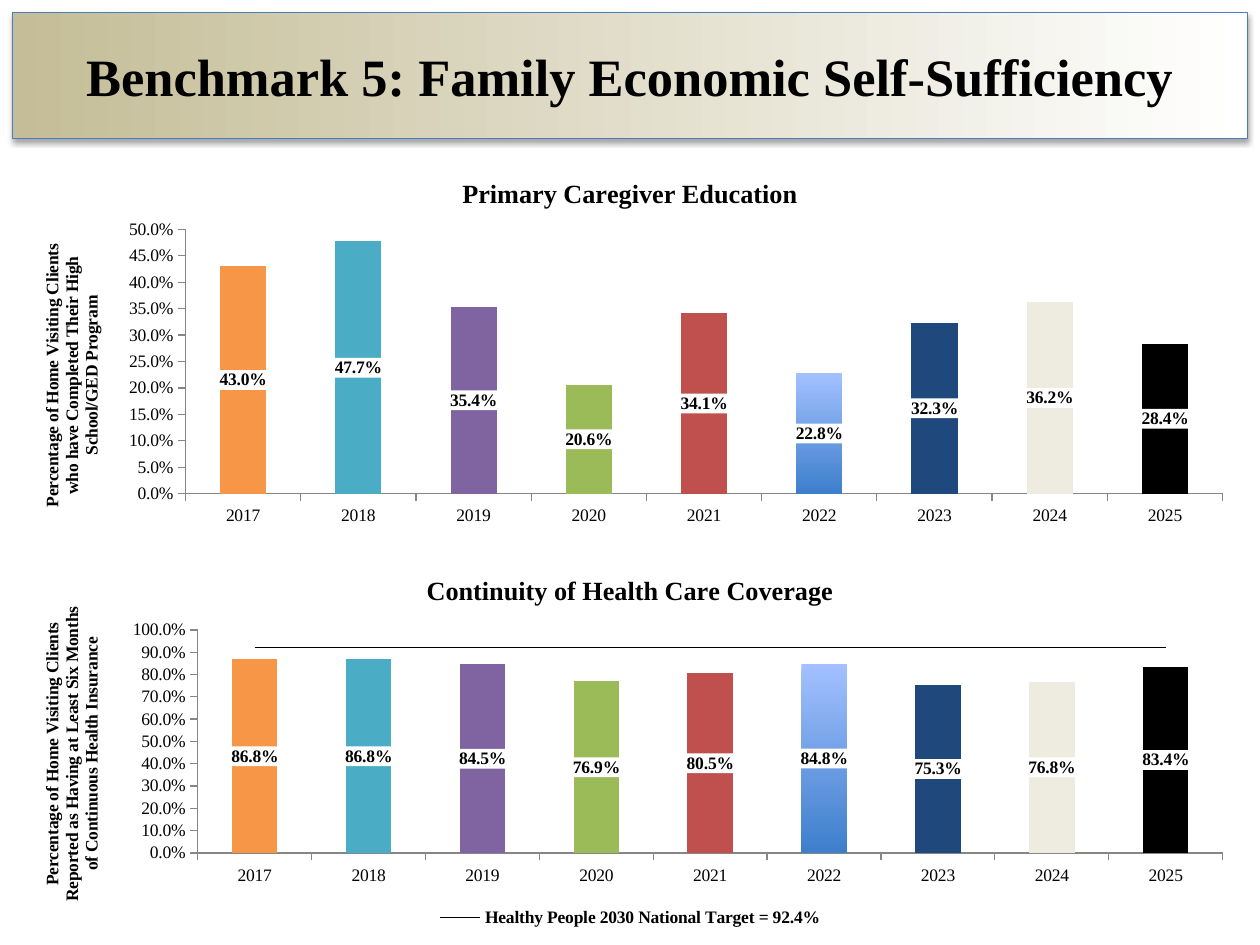
from lxml import etree
from pptx import Presentation
from pptx import util as u
from pptx.chart import data as chart_data
from pptx.dml import color as dml
from pptx.enum import chart as kinds, text
from pptx.oxml import parse_xml
from pptx.oxml.ns import nsdecls, qn

FACE = "Times New Roman"
YEARS = [str(year) for year in range(2017, 2026)]
BAR_COLORS = ["F79646", "4BACC6", "8064A2", "9BBB59", "C0504D",
              ["A3C0FF", "3D7FCC"], "1F497D", "EEECE1", "000000"]
CHARTS = [
    dict(title="Primary Caregiver Education", top=90, maximum=0.5, step=0.05,
         axis="Percentage of Home Visiting Clients who have Completed "
              "Their High School/GED Program",
         values=[0.43, 0.477, 0.354, 0.206, 0.341, 0.228, 0.323, 0.362, 0.284],
         target=None, plot=(0.14, 0.19, 0.84, 0.7), axis_title=(0.02, 0.22)),
    dict(title="Continuity of Health Care Coverage", top=316.8, maximum=1, step=0.1,
         axis="Percentage of Home Visiting Clients Reported as Having at Least "
              "Six Months of Continuous Health Insurance",
         values=[0.868, 0.868, 0.845, 0.769, 0.805, 0.848, 0.753, 0.768, 0.834],
         target="Healthy People 2030 National Target = 92.4%",
         plot=(0.15, 0.2, 0.83, 0.59), axis_title=(0.02, 0.13)),
]


def rgb(value):
    return dml.RGBColor.from_string(value)


def write(frame, content, size=10, bold=True, color="000000", align=text.PP_ALIGN.CENTER):
    para = frame.paragraphs[0]
    para.alignment = align
    span = para.add_run()
    span.text = content
    span.font.name = FACE
    span.font.size = u.Pt(size)
    span.font.bold = bold
    span.font.color.rgb = rgb(color)


deck = Presentation()
deck.slide_width, deck.slide_height = u.Pt(720), u.Pt(540)
page = deck.slides.add_slide(deck.slide_layouts[5])

banner = page.shapes.title
banner.left, banner.top, banner.width, banner.height = map(u.Pt, (7.2, 7.2, 705.6, 72))
banner.fill.gradient()
banner.fill.gradient_angle = 0
for stop, value in zip(banner.fill.gradient_stops, ("C4BD97", "FFFFFF")):
    stop.color.rgb = rgb(value)
banner.line.color.rgb = rgb("4B7EBC")
banner.line.width = u.Pt(0.75)
banner._element.spPr.append(parse_xml(
    f'<a:effectLst {nsdecls("a")}><a:outerShdw blurRad="39370" dist="22860" dir="5400000" '
    'rotWithShape="0"><a:srgbClr val="000000"><a:alpha val="35000"/></a:srgbClr>'
    '</a:outerShdw></a:effectLst>'))
banner.text_frame.vertical_anchor = text.MSO_ANCHOR.MIDDLE
write(banner.text_frame, "Benchmark 5: Family Economic Self-Sufficiency", size=30)

for item in CHARTS:
    data = chart_data.CategoryChartData(number_format="0.0%")
    data.categories = YEARS
    data.add_series("Series 1", item["values"])
    if item["target"]:
        data.add_series(item["target"], [0.92] * len(YEARS))
    chart = page.shapes.add_chart(
        kinds.XL_CHART_TYPE.COLUMN_CLUSTERED, u.Pt(7.2), u.Pt(item["top"]),
        u.Pt(705.6), u.Pt(216), data).chart
    chart.font.name = FACE
    chart.font.size = u.Pt(10)
    chart.font.color.rgb = rgb("000000")
    chart.has_title = True
    write(chart.chart_title.text_frame, item["title"], size=15)
    chart.chart_title.include_in_layout = False
    chart.has_legend = bool(item["target"])

    columns = chart.plots[0]
    columns.gap_width = 150
    columns.vary_by_categories = False
    bars = columns.series[0]
    bars.format.fill.solid()
    bars.format.fill.fore_color.rgb = rgb("4F81BD")
    for index, value in enumerate(BAR_COLORS):
        fill = bars.points[index].format.fill
        if isinstance(value, list):
            fill.gradient()
            fill.gradient_angle = 270
            for stop, shade in zip(fill.gradient_stops, value):
                stop.color.rgb = rgb(shade)
        else:
            fill.solid()
            fill.fore_color.rgb = rgb(value)
    labels = bars.data_labels
    labels.show_value = True
    labels.number_format = "0.0%"
    labels.number_format_is_linked = False
    labels.position = kinds.XL_LABEL_POSITION.CENTER
    labels.font.name = FACE
    labels.font.size = u.Pt(10)
    labels.font.bold = True
    labels.font.color.rgb = rgb("000000")
    labels._element.find(qn("c:txPr")).addprevious(parse_xml(
        f'<c:spPr {nsdecls("c", "a")}><a:solidFill><a:srgbClr val="FFFFFF"/>'
        '</a:solidFill></c:spPr>'))

    years, shares = chart.category_axis, chart.value_axis
    for axis in (years, shares):
        axis.has_major_gridlines = False
        axis.major_tick_mark = kinds.XL_TICK_MARK.OUTSIDE
        axis.minor_tick_mark = kinds.XL_TICK_MARK.NONE
        axis.format.line.color.rgb = rgb("868686")
        axis.format.line.width = u.Pt(0.75)
        axis.tick_labels.font.name = FACE
        axis.tick_labels.font.size = u.Pt(10)
    shares.minimum_scale, shares.maximum_scale = 0, item["maximum"]
    shares.major_unit = item["step"]
    shares.tick_labels.number_format = "0.0%"
    shares.tick_labels.number_format_is_linked = False
    shares.has_title = True
    write(shares.axis_title.text_frame, item["axis"])
    turn = shares.axis_title.text_frame._txBody.bodyPr
    turn.set("rot", "-5400000")
    turn.set("vert", "horz")

    area = chart._chartSpace.chart.plotArea
    title = shares.axis_title._element
    for owner, places in ((area, item["plot"]), (title, item["axis_title"])):
        for old in owner.findall(qn("c:layout")):
            owner.remove(old)
        layout = etree.Element(qn("c:layout"))
        manual = etree.SubElement(layout, qn("c:manualLayout"))
        if owner is area:
            etree.SubElement(manual, qn("c:layoutTarget"), val="inner")
        for name in ("xMode", "yMode"):
            etree.SubElement(manual, qn(f"c:{name}"), val="edge")
        for name, place in zip("xywh", places):
            etree.SubElement(manual, qn(f"c:{name}"), val=str(place))
        owner.insert(0 if owner is area else 1, layout)

    if item["target"]:
        target = columns.series[1]
        target.format.line.color.rgb = rgb("000000")
        target.format.line.width = u.Pt(0.75)
        series = target._element
        for flag in series.findall(qn("c:invertIfNegative")):
            series.remove(flag)
        series.find(qn("c:spPr")).addnext(parse_xml(
            f'<c:marker {nsdecls("c")}><c:symbol val="none"/></c:marker>'))
        etree.SubElement(series, qn("c:smooth"), val="0")
        bar_group = area.find(qn("c:barChart"))
        line_group = etree.Element(qn("c:lineChart"))
        etree.SubElement(line_group, qn("c:grouping"), val="standard")
        etree.SubElement(line_group, qn("c:varyColors"), val="0")
        line_group.append(series)
        etree.SubElement(line_group, qn("c:marker"), val="1")
        for link in bar_group.findall(qn("c:axId")):
            etree.SubElement(line_group, qn("c:axId"), val=link.get("val"))
        bar_group.addnext(line_group)

        legend = chart.legend
        legend.position = kinds.XL_LEGEND_POSITION.BOTTOM
        legend.include_in_layout = False
        legend.font.name = FACE
        legend.font.size = u.Pt(10)
        legend.font.bold = True
        legend._element.find(qn("c:legendPos")).addnext(parse_xml(
            f'<c:legendEntry {nsdecls("c")}><c:idx val="0"/><c:delete val="1"/></c:legendEntry>'))

deck.save("out.pptx")
